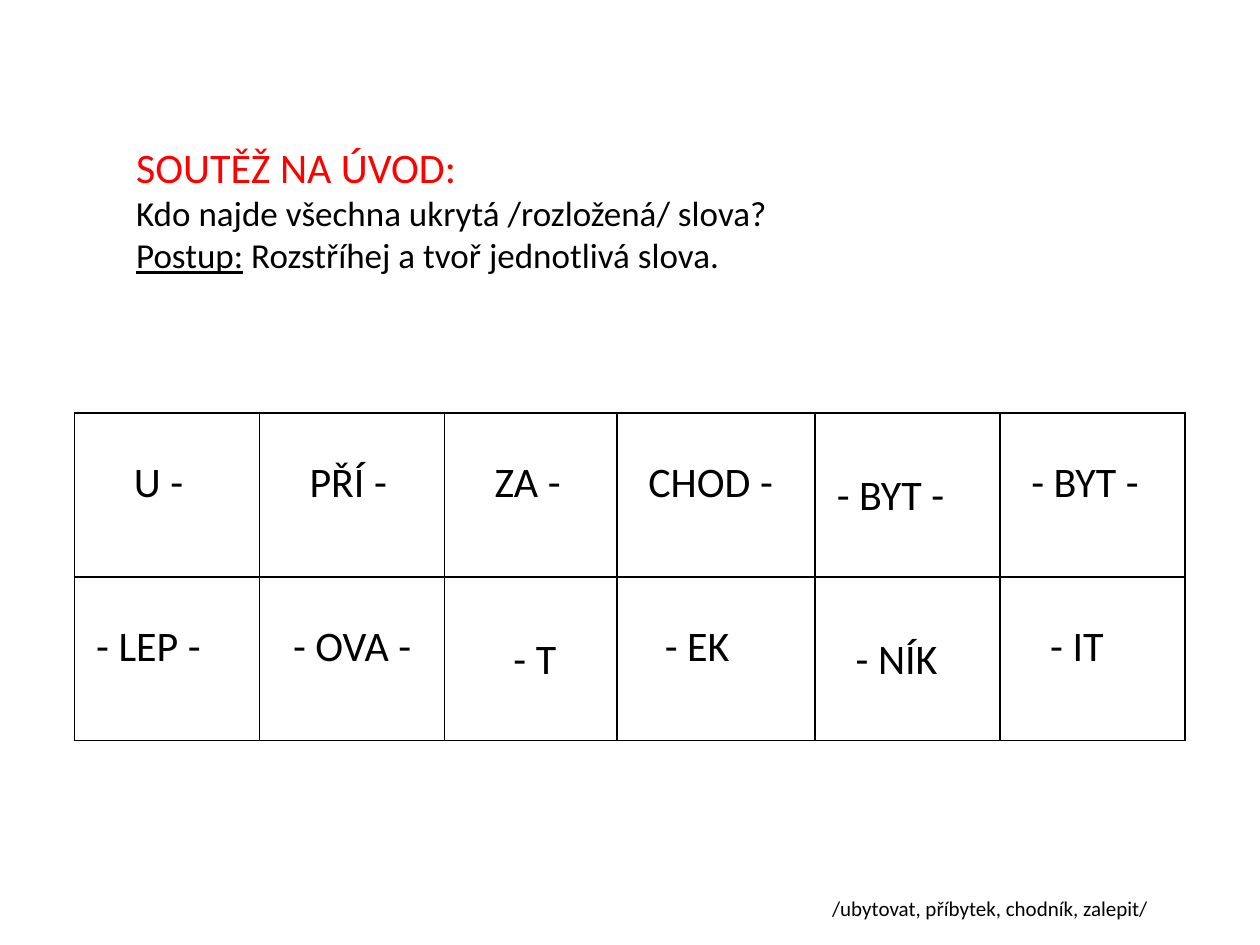
from pptx import Presentation
from pptx.dml.color import RGBColor
from pptx.enum.text import MSO_ANCHOR as Anchor, MSO_AUTO_SIZE as AutoSize, PP_ALIGN as Align
from pptx.oxml import parse_xml
from pptx.oxml.ns import nsdecls
from pptx.util import Cm, Pt

INK, RED, WHITE = "000000", "FF0000", "FFFFFF"


def color(value):
    return RGBColor.from_string(value)


class Worksheet:
    """Holds the text style and the slide being filled."""
    font = "Calibri"
    space = 0.19  # cm, one step of indent in the cells

    def __init__(self, prs):
        self.slide = prs.slides.add_slide(prs.slide_layouts[5])

    def format(self, p, size, ink=INK, align=Align.LEFT):
        p.alignment = align
        p.font.name, p.font.size = self.font, Pt(size)
        p.font.color.rgb = color(ink)

    def heading(self, box, lines):
        """Each line is (underlined lead, text, size, colour)."""
        sp = self.slide.shapes.title
        sp.left, sp.top, sp.width, sp.height = map(Cm, box)
        tf = sp.text_frame
        tf.auto_size, tf.vertical_anchor = AutoSize.NONE, Anchor.TOP
        for i, (lead, text, size, ink) in enumerate(lines):
            p = tf.add_paragraph() if i else tf.paragraphs[0]
            self.format(p, size, ink)
            if lead:
                r = p.add_run()
                r.text, r.font.underline = lead, True
            p.add_run().text = text

    def note(self, box, text, size):
        tf = self.slide.shapes.add_textbox(*map(Cm, box)).text_frame
        tf.word_wrap = True
        p = tf.paragraphs[0]
        p.text = text
        self.format(p, size, align=Align.RIGHT)

    def border(self, cell):
        for i, side in enumerate(("lnL", "lnR", "lnT", "lnB")):
            line = parse_xml(
                f'<a:{side} {nsdecls("a")} w="12700"><a:solidFill>'
                f'<a:srgbClr val="{INK}"/></a:solidFill></a:{side}>')
            cell._tc.get_or_add_tcPr().insert(i, line)

    def table(self, left, top, widths, row_height, rows, size):
        """Each cell is (text, indent steps, top margin in cm)."""
        frame = self.slide.shapes.add_table(
            len(rows), len(widths), Cm(left), Cm(top),
            Cm(sum(widths)), Cm(row_height * len(rows)))
        table = frame.table
        table.first_row = table.horz_banding = False
        for column, width in zip(table.columns, widths):
            column.width = Cm(width)
        for i, row in enumerate(rows):
            table.rows[i].height = Cm(row_height)
            for j, (text, steps, margin_top) in enumerate(row):
                cell = table.cell(i, j)
                cell.fill.solid()
                cell.fill.fore_color.rgb = color(WHITE)
                cell.margin_left = Cm(0.25 + steps * self.space)
                cell.margin_right = Cm(0)
                cell.margin_top = Cm(margin_top)
                p = cell.text_frame.paragraphs[0]
                p.text = text
                self.format(p, size)
                self.border(cell)


def main():
    prs = Presentation()
    prs.slide_width, prs.slide_height = Cm(25.4), Cm(19.05)
    sheet = Worksheet(prs)

    # Task
    sheet.heading((2.49, 2.72, 19.99, 3.84), [
        ("", "SOUTĚŽ NA ÚVOD:", 24, RED),
        ("", "Kdo najde všechna ukrytá /rozložená/ slova?", 20, INK),
        ("Postup:", " Rozstříhej a tvoř jednotlivá slova.", 20, INK),
    ])

    # Word parts to cut out, on two text heights
    high, low = 0.9, 1.16
    sheet.table(1.5, 8.33, [3.73, 3.73, 3.48, 3.99, 3.73, 3.73], 3.3, [
        [("U -", 5, high), ("PŘÍ -", 4, high), ("ZA -", 4, high),
         ("CHOD -", 2, high), ("- BYT -", 1, low), ("- BYT -", 2, high)],
        [("- LEP -", 1, high), ("- OVA -", 2.25, high), ("- T", 6, low),
         ("- EK", 3.75, high), ("- NÍK", 3, low), ("- IT", 4, high)],
    ], 24)

    # Answers
    sheet.note((9.09, 17.93, 14.3, 0.76),
               "/ubytovat, příbytek, chodník, zalepit/", 12)

    prs.save("out.pptx")


if __name__ == "__main__":
    main()
